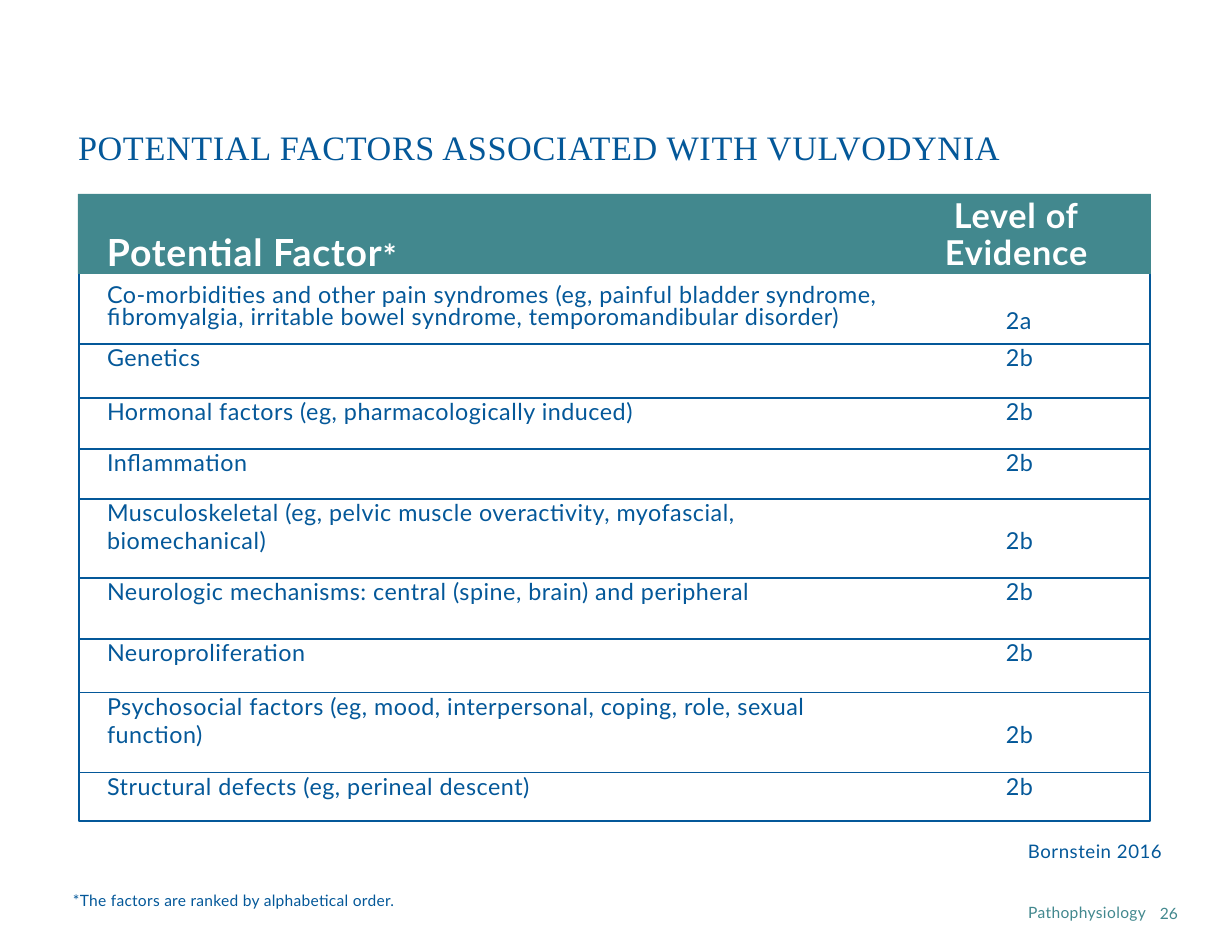
from lxml import etree
from pptx import Presentation
from pptx.dml.color import RGBColor
from pptx.enum.shapes import MSO_SHAPE
from pptx.enum.text import MSO_ANCHOR, PP_ALIGN
from pptx.oxml.ns import qn
from pptx.util import Emu, Pt

RECTANGLE = MSO_SHAPE.RECTANGLE
TOP = MSO_ANCHOR.TOP
LEFT, RIGHT = PP_ALIGN.LEFT, PP_ALIGN.RIGHT

BLUE, TEAL, WHITE = "045899", "42888E", "FFFFFF"
SERIF, SANS = "Times New Roman", "Lato"
RULE = Pt(0.96)


def px(length):
    """Turn pixels, 112 to the inch, into EMU."""
    return Emu(round(length * 914400 / 112))


def write(frame, text, size, color, spacing, margins=(0, 0, 0, 0), font=SANS,
          bold=False, align=LEFT, line=None):
    """Fill a text frame or table cell; margins are left, top, right, bottom."""
    for side, margin in zip(("left", "top", "right", "bottom"), margins):
        setattr(frame, "margin_" + side, px(margin))
    frame.vertical_anchor = TOP
    para = getattr(frame, "text_frame", frame).paragraphs[0]
    for name, value in {"alignment": align, "line_spacing": line}.items():
        setattr(para, name, value)
    span = para.add_run()
    span.text = text
    for name, value in {"name": font, "size": Pt(size), "bold": bold}.items():
        setattr(span.font, name, value)
    span.font.color.rgb = RGBColor.from_string(color)
    span._r.get_or_add_rPr().set("spc", str(spacing))
    return para


deck = Presentation()
deck.slide_width, deck.slide_height = px(1232), px(952)
page = deck.slides.add_slide(deck.slide_layouts[5])

title = page.shapes.title
title.left, title.top, title.width, title.height = map(px, (78, 97, 1077, 120))
title.text_frame.word_wrap = True
write(title.text_frame, "POTENTIAL FACTORS ASSOCIATED WITH VULVODYNIA", 22, BLUE, 44,
      margins=(0, 29, 0, 0), font=SERIF)

# Factor, level, row height, space above each, line spacing
factors = [
    ("Co-morbidities and other pain syndromes (eg, painful bladder syndrome, "
     "fibromyalgia, irritable bowel syndrome, temporomandibular disorder)",
     "2a", 61, 4, 24, Pt(14)),
    ("Genetics", "2b", 54, 0, 0, None),
    ("Hormonal factors (eg, pharmacologically induced)", "2b", 51, 0, 0, None),
    ("Inflammation", "2b", 50, 0, 0, None),
    ("Musculoskeletal (eg, pelvic muscle overactivity, myofascial, biomechanical)",
     "2b", 79, 0, 28, None),
    ("Neurologic mechanisms: central (spine, brain) and peripheral",
     "2b", 61, 0, 0, None),
    ("Neuroproliferation", "2b", 54, 0, 0, None),
    ("Psychosocial factors (eg, mood, interpersonal, coping, role, sexual function)",
     "2b", 80, 0, 28, None),
    ("Structural defects (eg, perineal descent)", "2b", 49, 0, 0, None),
]
heights = [factor[2] for factor in factors]
table = page.shapes.add_table(len(factors), 2, px(79), px(283), px(1071),
                              px(sum(heights))).table
table.first_row = table.horz_banding = False
for column, width in zip(table.columns, (852, 219)):
    column.width = px(width)

last = len(factors) - 1
for index, (factor, level, height, factor_drop, level_drop, line) in enumerate(factors):
    table.rows[index].height = px(height)
    factor_cell, level_cell = table.cell(index, 0), table.cell(index, 1)
    write(factor_cell, factor, 15, BLUE, 33, margins=(28, factor_drop, 47, 0), line=line)
    write(level_cell, level, 15, BLUE, 33, margins=(75, level_drop, 0, 0))
    edges = [tag for tag, inner in (("a:lnT", index > 0), ("a:lnB", index < last)) if inner]
    for cell in (factor_cell, level_cell):
        properties = cell._tc.get_or_add_tcPr()
        for tag in edges:
            edge = etree.SubElement(properties, qn(tag), w=str(RULE))
            fill = etree.SubElement(edge, qn("a:solidFill"))
            etree.SubElement(fill, qn("a:srgbClr"), val=BLUE)
        cell.fill.solid()
        cell.fill.fore_color.rgb = RGBColor.from_string(WHITE)

table_frame = page.shapes.add_shape(RECTANGLE, px(79), px(195), px(1071), px(626))
table_frame.fill.background()
table_frame.line.color.rgb = RGBColor.from_string(BLUE)
table_frame.line.width = RULE
header_band = page.shapes.add_shape(RECTANGLE, px(78), px(194), px(1073), px(80))
header_band.fill.solid()
header_band.fill.fore_color.rgb = RGBColor.from_string(TEAL)
header_band.line.fill.background()
for shape in (table_frame, header_band):
    shape.shadow.inherit = False

# Place, text, size, colour, letter spacing, further format
labels = [
    ((107, 210, 319, 52), "Potential Factor", 24, WHITE, 50, {"bold": True}),
    ((945, 194, 175, 82), "Level of Evidence", 22, WHITE, 50,
     {"bold": True, "line": Pt(24), "margins": (0, 4, 0, 0)}),
    ((73, 894, 342, 19), "*The factors are ranked by alphabetical order.",
     10, BLUE, 19, {"line": Pt(10.3)}),
    ((1160, 902, 25, 19), "26", 10, TEAL, 0, {"line": Pt(13.1)}),
    ((925, 903, 221, 19), "Pathophysiology", 10, TEAL, 26,
     {"line": Pt(12.1), "align": RIGHT}),
    ((1017, 834, 187, 34), "Bornstein 2016", 12, BLUE, 33,
     {"margins": (11, 6, 11, 6)}),
]
paras = []
for place, text, size, color, spacing, extra in labels:
    box = page.shapes.add_textbox(*map(px, place))
    box.text_frame.word_wrap = True
    paras.append(write(box.text_frame, text, size, color, spacing, **extra))

factor_heading, level_heading = paras[:2]
level_heading._p.get_or_add_pPr().set("indent", str(px(9)))

asterisk = factor_heading.add_run()
asterisk.text = "*"
for name, value in {"name": SANS, "size": Pt(36), "bold": True}.items():
    setattr(asterisk.font, name, value)
asterisk.font.color.rgb = RGBColor.from_string(WHITE)
asterisk._r.get_or_add_rPr().set("baseline", "-5000")

deck.save("out.pptx")
